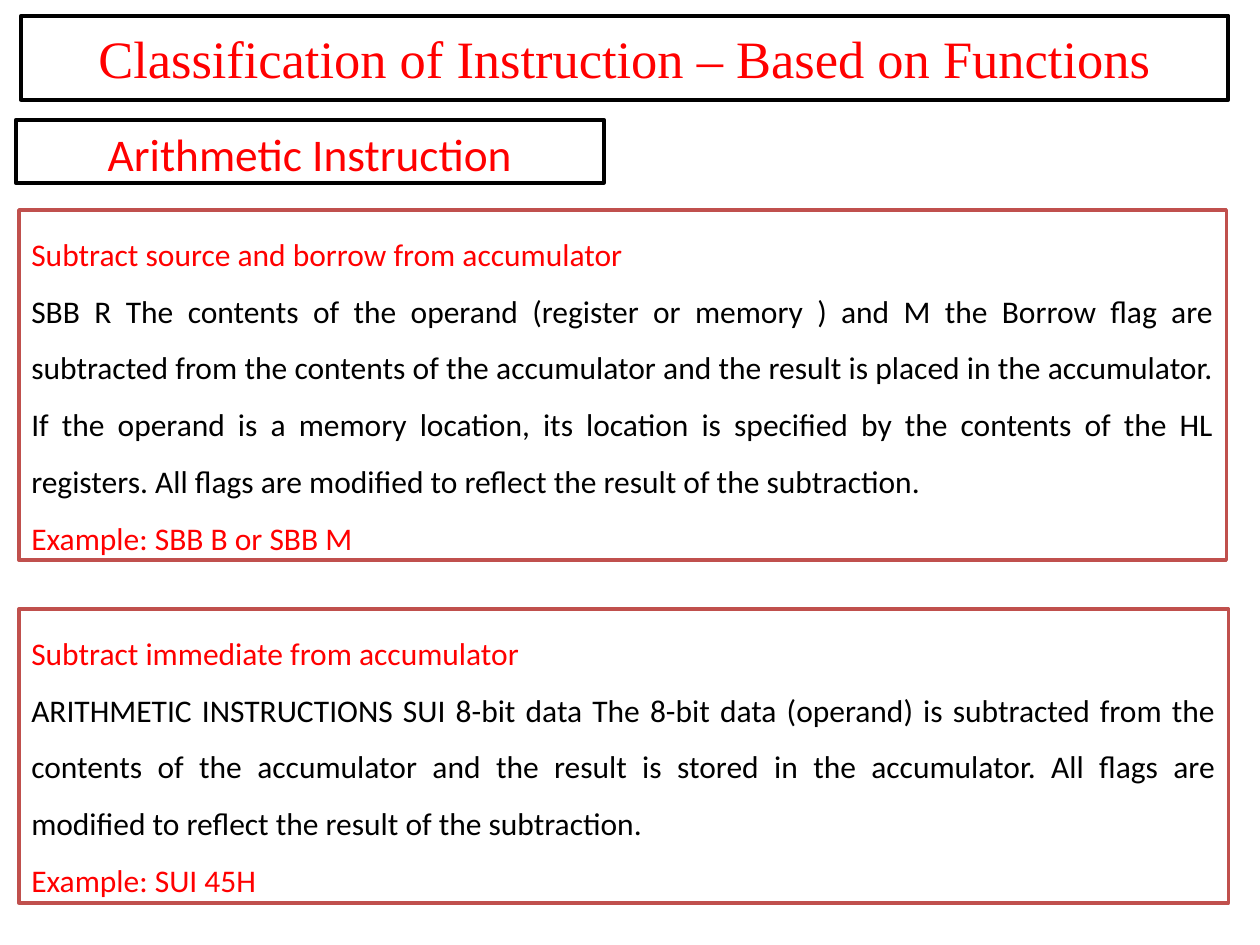
from dataclasses import dataclass

from pptx import Presentation
from pptx.dml.color import RGBColor
from pptx.enum.text import MSO_ANCHOR, MSO_AUTO_SIZE, PP_ALIGN
from pptx.util import Inches, Pt

CENTER, JUSTIFY = PP_ALIGN.CENTER, PP_ALIGN.JUSTIFY
TOP, MIDDLE = MSO_ANCHOR.TOP, MSO_ANCHOR.MIDDLE
NO_FIT, GROW = MSO_AUTO_SIZE.NONE, MSO_AUTO_SIZE.SHAPE_TO_FIT_TEXT
TITLE_SLIDE = 0


@dataclass(frozen=True)
class Theme:
    accent: RGBColor = RGBColor(0xFF, 0x00, 0x00)
    ink: RGBColor = RGBColor(0x00, 0x00, 0x00)
    paper: RGBColor = RGBColor(0xFF, 0xFF, 0xFF)
    frame: RGBColor = RGBColor(0xC0, 0x50, 0x4D)
    title_font: str = "Times New Roman"
    body_font: str = "Calibri"
    title_size: float = 30
    subtitle_size: float = 25.9
    body_size: float = 18
    heading_line: float = 2.25
    panel_line: float = 2
    line_spacing: float = 1.5


class SlideBuilder:
    """Places elements by shares of the slide's width and height."""

    def __init__(self, deck, theme):
        self.deck = deck
        self.theme = theme
        self.page = deck.slides.add_slide(deck.slide_layouts[TITLE_SLIDE])

    def area(self, left, top, width, height):
        """Turn percentages of the slide into lengths."""
        across, down = self.deck.slide_width / 100, self.deck.slide_height / 100
        return (int(left * across), int(top * down),
                int(width * across), int(height * down))

    def outline(self, box, color, width):
        box.line.color.rgb = color
        box.line.width = Pt(width)

    def style(self, para, font, size, color, align):
        para.alignment = align
        para.font.name = font
        para.font.size = Pt(size)
        para.font.color.rgb = color

    def heading(self, box, text, area, font, size, anchor):
        box.left, box.top, box.width, box.height = self.area(*area)
        self.outline(box, self.theme.ink, self.theme.heading_line)
        frame = box.text_frame
        frame.text = text
        frame.auto_size = NO_FIT
        frame.vertical_anchor = anchor
        self.style(frame.paragraphs[0], font, size, self.theme.accent, CENTER)

    def title(self, text, area):
        self.heading(self.page.shapes.title, text, area,
                     self.theme.title_font, self.theme.title_size, MIDDLE)

    def subtitle(self, text, area):
        self.heading(self.page.placeholders[1], text, area,
                     self.theme.body_font, self.theme.subtitle_size, TOP)

    def panel(self, name, description, example, area):
        theme = self.theme
        box = self.page.shapes.add_textbox(*self.area(*area))
        box.fill.solid()
        box.fill.fore_color.rgb = theme.paper
        self.outline(box, theme.frame, theme.panel_line)
        frame = box.text_frame
        frame.word_wrap = True
        frame.auto_size = GROW
        frame.text = "\n".join((name, description, example))
        colors = (theme.accent, theme.ink, theme.accent)
        for para, color in zip(frame.paragraphs, colors):
            self.style(para, theme.body_font, theme.body_size, color, JUSTIFY)
            para.line_spacing = theme.line_spacing


def main():
    deck = Presentation()
    deck.slide_width, deck.slide_height = Inches(10), Inches(7.5)
    slide = SlideBuilder(deck, Theme())
    slide.title("Classification of Instruction – Based on Functions",
                (1.67, 1.67, 95.83, 8.89))
    slide.subtitle("Arithmetic Instruction", (1.25, 12.67, 46.67, 6.67))
    slide.panel(
        "Subtract source and borrow from accumulator",
        "SBB R The contents of the operand (register or memory ) and M the "
        "Borrow flag are subtracted from the contents of the accumulator and "
        "the result is placed in the accumulator. If the operand is a memory "
        "location, its location is specified by the contents of the HL "
        "registers. All flags are modified to reflect the result of the "
        "subtraction. ",
        "Example: SBB B or SBB M",
        (1.5, 22.22, 95.83, 37.04))
    slide.panel(
        "Subtract immediate from accumulator",
        "ARITHMETIC INSTRUCTIONS SUI 8-bit data The 8-bit data (operand) is "
        "subtracted from the contents of the accumulator and the result is "
        "stored in the accumulator. All flags are modified to reflect the "
        "result of the subtraction. ",
        "Example: SUI 45H ",
        (1.5, 64.44, 96, 31.11))
    deck.save("out.pptx")


if __name__ == "__main__":
    main()
